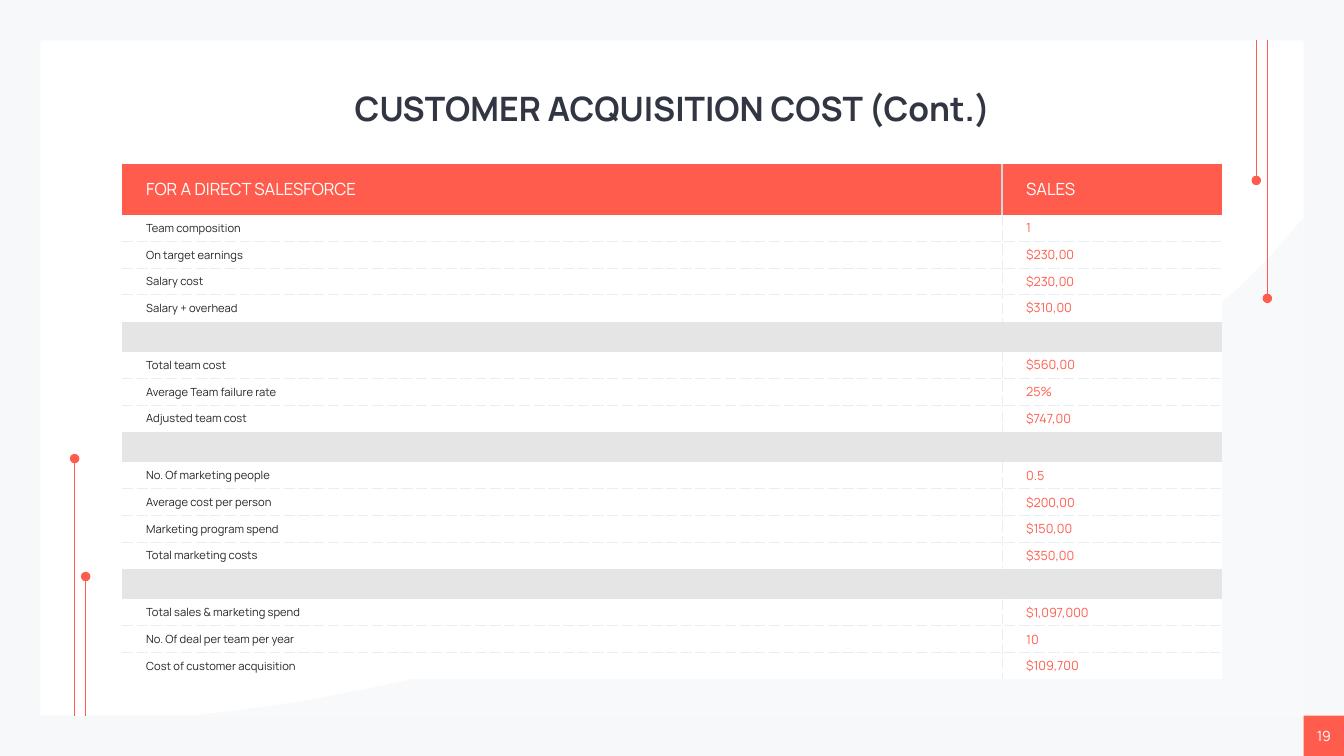
from lxml.etree import SubElement
from pptx import Presentation
from pptx.dml.color import RGBColor
from pptx.enum.shapes import MSO_CONNECTOR, MSO_SHAPE
from pptx.enum.text import MSO_ANCHOR, PP_ALIGN
from pptx.oxml.ns import qn
from pptx.util import Inches, Pt

FONT = "Manrope"
HUES = {"back": "F6F8FA", "white": "FFFFFF", "wave": "F7F9FB", "red": "FF5C4D",
        "title": "323643", "text": "252525", "gap": "E5E5E5",
        "dash": "E7EEF6", "split": "D8D8D8"}
HEAD = ("FOR A DIRECT SALESFORCE", "SALES")
BLOCKS = [
    [("Team composition", "1"), ("On target earnings", "$230,00"),
     ("Salary cost", "$230,00"), ("Salary + overhead", "$310,00")],
    [("Total team cost", "$560,00"), ("Average Team failure rate", "25%"),
     ("Adjusted team cost", "$747,00")],
    [("No. Of marketing people", "0.5"), ("Average cost per person", "$200,00"),
     ("Marketing program spend", "$150,00"), ("Total marketing costs", "$350,00")],
    [("Total sales & marketing spend", "$1,097,000"),
     ("No. Of deal per team per year", "10"),
     ("Cost of customer acquisition", "$109,700")],
]


def hue(name):
    return RGBColor.from_string(HUES[name])


def paint(shape, name):
    shape.shadow.inherit = False
    shape.fill.solid()
    shape.fill.fore_color.rgb = hue(name)
    shape.line.fill.background()


def block(slide, kind, box, name):
    shape = slide.shapes.add_shape(kind, *map(Inches, box))
    paint(shape, name)
    return shape


def write(frame, text, size, name, bold=False, align=None):
    frame.text = text
    para = frame.paragraphs[0]
    para.alignment = align
    font = para.runs[0].font
    font.name, font.size, font.bold = FONT, Pt(size), bold
    font.color.rgb = hue(name)


# White card with the pale wave in its lower right corner
def curve(start, one, two, end, steps=24):
    for i in range(1, steps + 1):
        t = i / steps
        u = 1 - t
        yield tuple(u**3 * a + 3 * u * u * t * b + 3 * u * t * t * c + t**3 * d
                    for a, b, c, d in zip(start, one, two, end))


def draw_card(slide, box):
    left, top, width, height = box
    block(slide, MSO_SHAPE.RECTANGLE, box, "white")
    right, base = left + width, top + height
    knots = [(-0.33, -4.56), (-1.52, -3.3), (-3.78, -1.96), (-6.52, -1.02),
             (-8.02, -0.51), (-9.48, -0.18), (-10.75, -0.03)]
    knots = [(right + x, base + y) for x, y in knots]
    edge = [knots[0], *curve(*knots[:4]), *curve(*knots[3:]),
            (right - 11.05, base), (right, base)]
    form = slide.shapes.build_freeform(Inches(right), Inches(base - 4.94), 1)
    form.add_line_segments([(Inches(x), Inches(y)) for x, y in edge], close=True)
    paint(form.convert_to_shape(), "wave")


def draw_title(slide, box):
    frame = slide.shapes.add_textbox(*map(Inches, box)).text_frame
    frame.word_wrap = True
    frame.vertical_anchor = MSO_ANCHOR.MIDDLE
    write(frame, "CUSTOMER ACQUISITION COST (Cont.)", 24, "title", True,
          PP_ALIGN.CENTER)


# Cost table
def rule(cell, sides):
    props = cell._tc.get_or_add_tcPr()
    for side in "LRTB":
        name, width = sides.get(side, (None, 0))
        line = SubElement(props, qn("a:ln" + side), w=str(Pt(width)))
        if name is None:
            SubElement(line, qn("a:noFill"))
            continue
        fill = SubElement(line, qn("a:solidFill"))
        SubElement(fill, qn("a:srgbClr"), val=HUES[name])
        if name == "dash":
            SubElement(line, qn("a:prstDash"), val="dash")


def style(cell, name, sides):
    rule(cell, sides)
    cell.fill.solid()
    cell.fill.fore_color.rgb = hue(name)
    cell.vertical_anchor = MSO_ANCHOR.MIDDLE
    cell.margin_left = Inches(0.24)
    cell.margin_right = cell.margin_top = cell.margin_bottom = 0


def fill_row(row, texts, fill, looks, mid, over=None, under=None):
    for cell, text, look, side in zip(row.cells, texts, looks, "RL"):
        sides = {side: mid, "T": over, "B": under}
        style(cell, fill, {k: v for k, v in sides.items() if v})
        write(cell.text_frame, text, *look)


def fill_gap(row):
    cells = list(row.cells)
    cells[0].merge(cells[1])
    for cell in cells:
        style(cell, "gap", {})
        para = cell.text_frame.paragraphs[0]._p
        SubElement(para, qn("a:endParaRPr"), sz="800")


def draw_table(slide, box):
    width, height = box[2:]
    lines = sum(map(len, BLOCKS))
    gaps = len(BLOCKS) - 1
    top, gap = 0.5, 0.3
    step = (height - top - gaps * gap) / lines
    table = slide.shapes.add_table(1 + lines + gaps, 2, *map(Inches, box)).table
    for col, share in zip(table.columns, (0.8, 0.2)):
        col.width = Inches(width * share)
    rows = iter(table.rows)
    row = next(rows)
    row.height = Inches(top)
    fill_row(row, HEAD, "red", [(12, "white")] * 2, ("split", 1))
    dash = ("dash", 0.75)
    for n, group in enumerate(BLOCKS):
        if n:
            row = next(rows)
            row.height = Inches(gap)
            fill_gap(row)
        for i, texts in enumerate(group):
            row = next(rows)
            row.height = Inches(step)
            fill_row(row, texts, "white", [(8, "text"), (9, "red")], dash,
                     dash if i else None,
                     dash if i < len(group) - 1 else None)


# Pairs of pins: a line from the card edge to a dot
def draw_pin(slide, x, start, end):
    line = slide.shapes.add_connector(MSO_CONNECTOR.STRAIGHT,
                                      *map(Inches, (x, start, x, end)))
    line.line.color.rgb = hue("red")
    line.line.width = Pt(0.75)
    SubElement(line._element.spPr, qn("a:effectLst"))
    dot = block(slide, MSO_SHAPE.OVAL, (x - 0.04, end - 0.04, 0.08, 0.08), "red")
    dot.line.color.rgb = hue("red")
    dot.line.width = Pt(1)


def draw_pins(slide, box):
    left, top, width, height = box
    right, base = left + width, top + height
    for inset, size in ((0.45, 1.39), (0.34, 2.56)):
        draw_pin(slide, left + inset, base, base - size + 0.01)
        draw_pin(slide, right - inset - 0.02, top, top + size)


def draw_page(slide, box):
    frame = block(slide, MSO_SHAPE.RECTANGLE, box, "red").text_frame
    frame.vertical_anchor = MSO_ANCHOR.MIDDLE
    write(frame, "19", 10, "white", align=PP_ALIGN.CENTER)


def main():
    deck = Presentation()
    deck.slide_width, deck.slide_height = Inches(13.33), Inches(7.5)
    slide = deck.slides.add_slide(deck.slide_layouts[6])
    slide.background.fill.solid()
    slide.background.fill.fore_color.rgb = hue("back")
    card = (0.4, 0.4, 12.53, 6.7)
    draw_card(slide, card)
    draw_title(slide, (2.04, 0.81, 9.26, 0.52))
    draw_table(slide, (1.21, 1.63, 10.91, 5.11))
    draw_pins(slide, card)
    draw_page(slide, (12.93, 7.1, 0.4, 0.4))
    deck.save("out.pptx")


if __name__ == "__main__":
    main()
